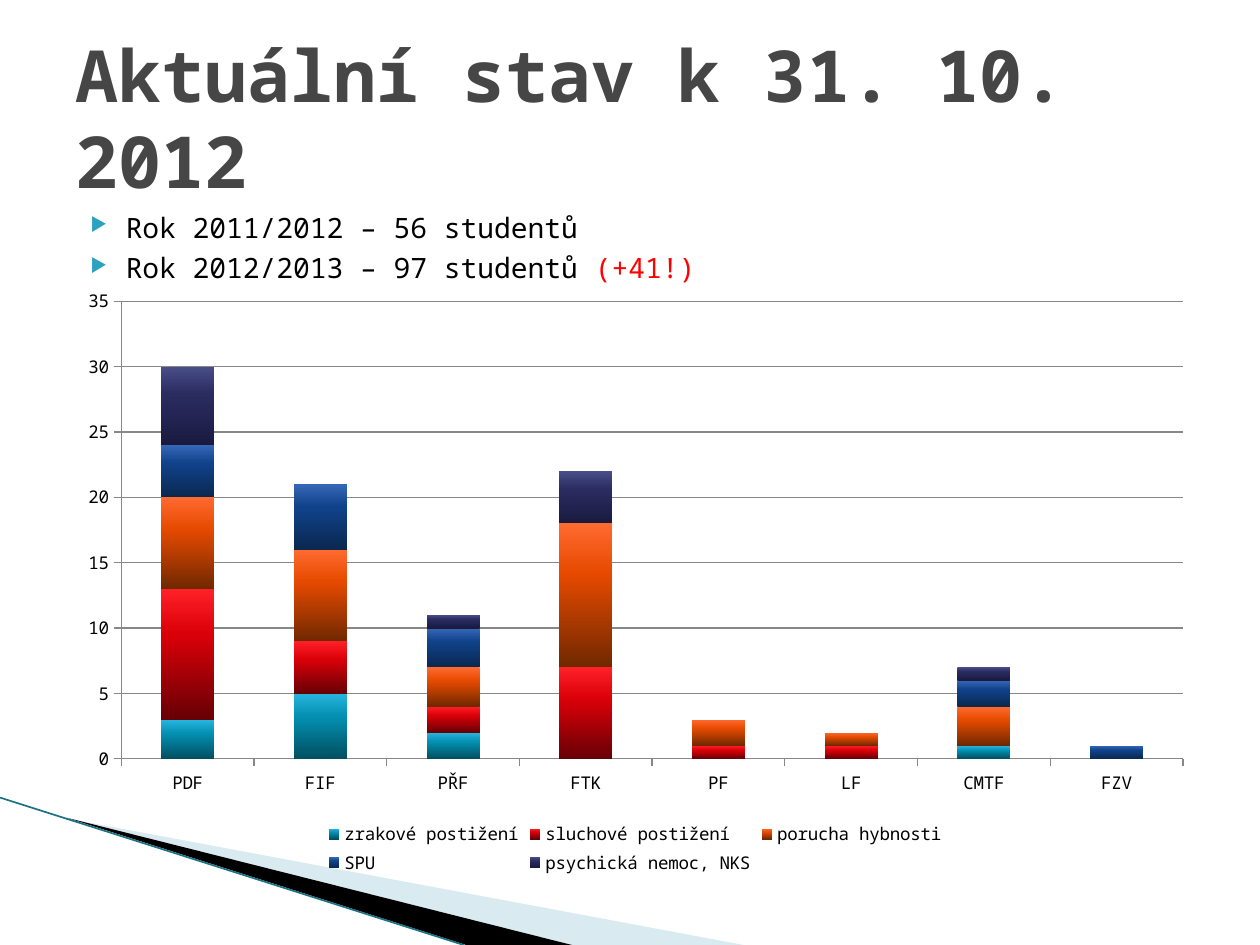
from copy import deepcopy

from lxml import etree
from pptx import Presentation
from pptx import util as u
from pptx.chart.data import CategoryChartData
from pptx.dml.color import RGBColor
from pptx.enum import chart as ch, shapes, text
from pptx.oxml import parse_xml
from pptx.oxml.ns import nsdecls, qn

FONT = "Noto Sans Mono"
BLACK = RGBColor(0, 0, 0)
RED = RGBColor(0xFF, 0, 0)
GREY = RGBColor(0x46, 0x46, 0x46)
AXIS = RGBColor(0x87, 0x87, 0x87)
PALE_BLUE = RGBColor(0xA0, 0xCB, 0xDC)
TEAL = RGBColor(0x1B, 0x72, 0x85)
BULLET = "2DA2BF"

FACULTIES = ["PDF", "FIF", "PŘF", "FTK", "PF", "LF", "CMTF", "FZV"]
# Name, values, gradient colours from top to bottom
SERIES = [
    ("zrakové postižení", (3, 5, 2, 0, 0, 0, 1, 0), ("28B6E0", "0490B2", "004F60")),
    ("sluchové postižení", (10, 4, 2, 7, 1, 1, 0, 0), ("FF2028", "DA0008", "660005")),
    ("porucha hybnosti", (7, 7, 3, 11, 2, 1, 3, 0), ("FF6A30", "E64A00", "702800")),
    ("SPU", (4, 5, 3, 0, 0, 0, 2, 1), ("3568B8", "10428A", "0A2850")),
    ("psychická nemoc, NKS", (6, 0, 1, 4, 0, 0, 1, 0), ("4A4E88", "2A2C60", "1A1A40")),
]
STOPS = (0, 0.35, 1)


class Deck:
    def __init__(self):
        self.prs = Presentation()
        self.prs.slide_width, self.prs.slide_height = u.Inches(10), u.Inches(7.5)
        self.s = self.prs.slides.add_slide(self.prs.slide_layouts[6])

    def polygon(self, points, color, alpha=None):
        pts = [(u.Inches(x), u.Inches(y)) for x, y in points]
        builder = self.s.shapes.build_freeform(*pts[0])
        builder.add_line_segments(pts[1:], close=True)
        sp = builder.convert_to_shape()
        sp.shadow.inherit = False
        sp.fill.solid()
        sp.fill.fore_color.rgb = color
        sp.line.fill.background()
        if alpha:
            clr = sp._element.spPr.find(".//" + qn("a:srgbClr"))
            etree.SubElement(clr, qn("a:alpha"), val=str(alpha * 1000))

    def line(self, x1, y1, x2, y2, color, width):
        sp = self.s.shapes.add_connector(
            shapes.MSO_CONNECTOR.STRAIGHT, *map(u.Inches, (x1, y1, x2, y2)))
        sp.line.color.rgb = color
        sp.line.width = u.Pt(width)
        etree.SubElement(sp._element.spPr, qn("a:effectLst"))

    def text(self, box, paragraphs, size, bold=False, bullet=False,
             anchor=text.MSO_ANCHOR.TOP):
        tf = self.s.shapes.add_textbox(*map(u.Inches, box)).text_frame
        tf.word_wrap = True
        tf.vertical_anchor = anchor
        for i, runs in enumerate(paragraphs):
            p = tf.add_paragraph() if i else tf.paragraphs[0]
            if bullet:
                self.bullet(p)
            if i:
                p.space_before = u.Pt(4)
            for words, color in runs:
                r = p.add_run()
                r.text = words
                r.font.name, r.font.size, r.font.bold = FONT, u.Pt(size), bold
                r.font.color.rgb = color

    def bullet(self, p):
        pPr = p._p.get_or_add_pPr()
        pPr.set("marL", str(u.Inches(0.4)))
        pPr.set("indent", str(u.Inches(-0.28)))
        color = etree.SubElement(pPr, qn("a:buClr"))
        etree.SubElement(color, qn("a:srgbClr"), val=BULLET)
        etree.SubElement(pPr, qn("a:buSzPct"), val="68000")
        etree.SubElement(pPr, qn("a:buChar"), char="▶")

    def gradient(self, fill, colors):
        fill.gradient()
        fill.gradient_angle = 270
        first = fill._fill._gradFill.gsLst[0]
        first.addnext(deepcopy(first))
        for stop, position, color in zip(fill.gradient_stops, STOPS, colors):
            stop.position = position
            stop.color.rgb = RGBColor.from_string(color)

    def stacked_chart(self, box, categories, series, plot_area):
        data = CategoryChartData()
        data.categories = categories
        for name, values, _ in series:
            data.add_series(name, values)
        chart = self.s.shapes.add_chart(
            ch.XL_CHART_TYPE.COLUMN_STACKED, *map(u.Inches, box), data).chart
        chart.has_title = False
        chart.font.name, chart.font.size = FONT, u.Pt(10)
        chart.font.color.rgb = BLACK
        chart.has_legend = True
        chart.legend.position = ch.XL_LEGEND_POSITION.BOTTOM
        chart.legend.include_in_layout = False

        # Columns
        plot = chart.plots[0]
        plot.vary_by_categories = False
        plot.overlap, plot.gap_width = 100, 150
        for column, (_, _, colors) in zip(plot.series, series):
            self.gradient(column.format.fill, colors)

        # Axes and gridlines
        values = chart.value_axis
        values.minimum_scale, values.maximum_scale, values.major_unit = 0, 35, 5
        values.has_major_gridlines = True
        for axis in (chart.category_axis, values):
            axis.major_tick_mark = ch.XL_TICK_MARK.OUTSIDE
            axis.format.line.color.rgb = AXIS
        values.major_gridlines.format.line.color.rgb = AXIS

        # Plot area as shares of the chart
        x, y, w, h = plot_area
        area = chart._chartSpace.chart.plotArea
        for old in area.findall(qn("c:layout")):
            area.remove(old)
        area.insert(0, parse_xml(
            f'<c:layout {nsdecls("c")}><c:manualLayout><c:layoutTarget val="inner"/>'
            '<c:xMode val="edge"/><c:yMode val="edge"/>'
            f'<c:x val="{x}"/><c:y val="{y}"/><c:w val="{w}"/><c:h val="{h}"/>'
            '</c:manualLayout></c:layout>'))


def main():
    deck = Deck()

    # Corner decoration
    deck.polygon([(0.55, 6.5), (5.9, 7.5), (4.54, 7.5)], PALE_BLUE, alpha=40)
    deck.polygon([(0.53, 6.49), (4.54, 7.5), (3.7, 7.5)], BLACK)
    deck.line(0, 6.33, 3.68, 7.5, TEAL, 0.95)

    # Student counts
    deck.text((0.5, 1.62, 9, 4.95), [
        [("Rok 2011/2012 – 56 studentů", BLACK)],
        [("Rok 2012/2013 – 97 studentů ", BLACK), ("(+41!)", RED)],
    ], 16, bullet=True)

    # Title
    deck.text((0.5, 0.3, 9, 1.25), [[("Aktuální stav k 31. 10. 2012", GREY)]],
              41, bold=True, anchor=text.MSO_ANCHOR.MIDDLE)

    # Students by faculty and type of disability
    deck.stacked_chart((0.51, 2.2, 9.06, 4.78), FACULTIES, SERIES,
                       (0.05, 0.04, 0.93, 0.76))

    deck.prs.save("out.pptx")


if __name__ == "__main__":
    main()
